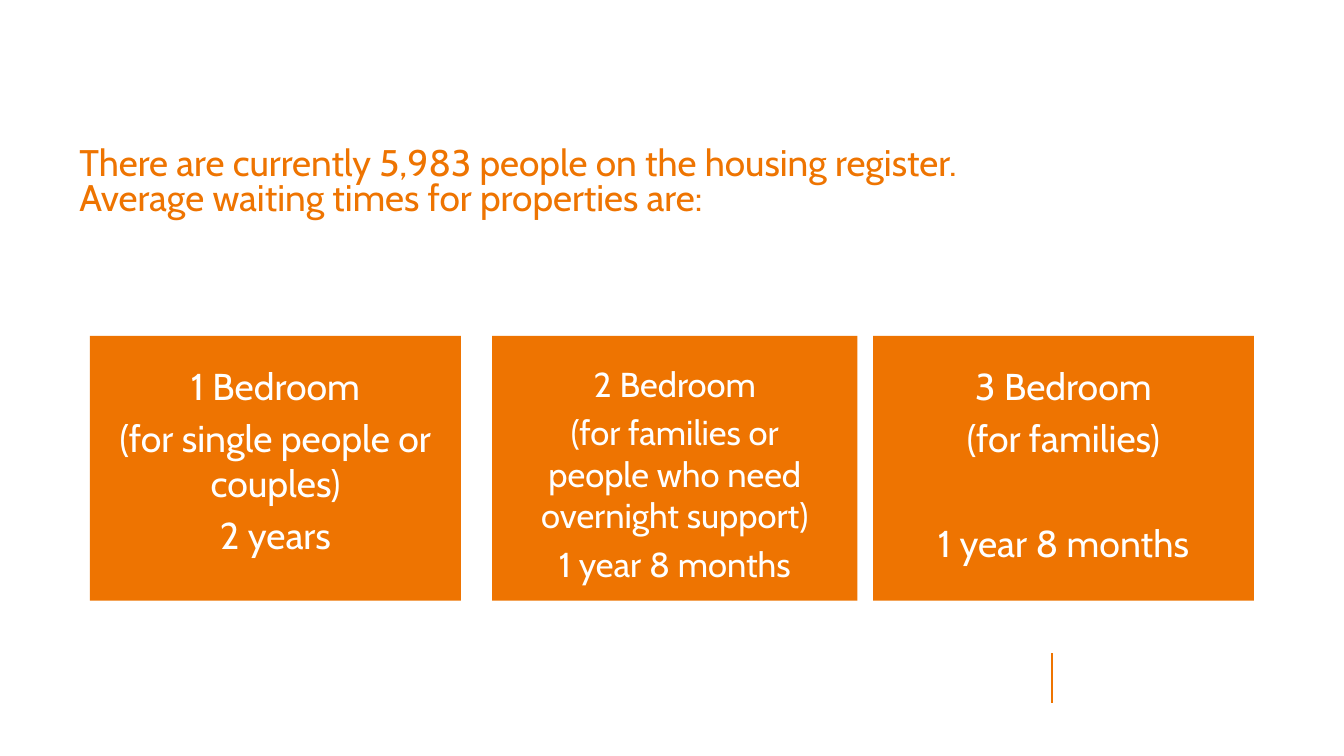
import pptx
import pptx.dml.color
import pptx.enum.shapes
import pptx.enum.text
import pptx.oxml.xmlchemy
import pptx.oxml.ns
import pptx.util
from lxml import etree

Pt = pptx.util.Pt
Align = pptx.enum.text.PP_ALIGN
Anchor = pptx.enum.text.MSO_ANCHOR

TITLE = ("There are currently 5,983 people on the housing register.\v"
         "Average waiting times for properties are:")

# left, width, type size, extra space above the waiting time, lines
CARDS = [
    (48.2, 198.8, 20, 0,
     ["1 Bedroom", "(for single people or couples)", "2 years"]),
    (263.6, 195.8, 18.5, 0,
     ["2 Bedroom", "(for families or people who need overnight support)",
      "1 year 8 months"]),
    (467.8, 203.9, 20, 28,
     ["3 Bedroom", "(for families)", "1 year 8 months"]),
]
CARD_TOP, CARD_HEIGHT, CARD_INSET = 180, 141.8, 14.4

THEME = {
    "font": "Cabin",
    "accent": pptx.dml.color.RGBColor.from_string("EE7401"),
    "on_accent": pptx.dml.color.RGBColor.from_string("FFFFFF"),
    "title_size": 19.8,
}


def place(shape, left, top, width, height):
    shape.left, shape.top = Pt(left), Pt(top)
    shape.width, shape.height = Pt(width), Pt(height)


def prepare_frame(shape, inset, anchor):
    frame = shape.text_frame
    frame.word_wrap = True
    frame.auto_size = pptx.enum.text.MSO_AUTO_SIZE.NONE
    frame.vertical_anchor = anchor
    frame.margin_left = frame.margin_right = Pt(inset)
    frame.margin_top = frame.margin_bottom = Pt(inset)
    return frame


def format_para(para, size, color, alignment):
    para.alignment = alignment
    para.font.name = THEME["font"]
    para.font.size = Pt(size)
    para.font.bold = False
    para.font.color.rgb = color


def remove_bullet(para):
    properties = para._p.get_or_add_pPr()
    properties.set("marL", "0")
    properties.set("indent", "0")
    etree.SubElement(properties, pptx.oxml.ns.qn("a:buNone"))


def add_title(page):
    title = page.shapes.title
    place(title, 42.5, 60.5, 623.5, 56.9)
    frame = prepare_frame(title, 0, Anchor.BOTTOM)
    frame.text = TITLE
    para = frame.paragraphs[0]
    para.line_spacing = 0.8
    format_para(para, THEME["title_size"], THEME["accent"], Align.LEFT)


def fill_card(box, left, width, size, extra_space, lines):
    place(box, left, CARD_TOP, width, CARD_HEIGHT)
    box.fill.solid()
    box.fill.fore_color.rgb = THEME["accent"]
    frame = prepare_frame(box, CARD_INSET, Anchor.TOP)
    frame.text = "\n".join(lines)
    for number, para in enumerate(frame.paragraphs):
        remove_bullet(para)
        para.space_before = Pt(0.2 * size if number else 0)
        format_para(para, size, THEME["on_accent"], Align.CENTER)
    if extra_space:
        para.space_before = Pt(0.2 * size + extra_space)


def add_footer_rule(page):
    rule = page.shapes.add_connector(
        pptx.enum.shapes.MSO_CONNECTOR.STRAIGHT,
        Pt(563.8), Pt(350), Pt(563.8), Pt(376.6))
    rule.line.color.rgb = THEME["accent"]
    rule.line.width = Pt(1)
    etree.SubElement(rule._element.spPr, pptx.oxml.ns.qn("a:effectLst"))


def main():
    deck = pptx.Presentation()
    deck.slide_width, deck.slide_height = Pt(720), Pt(405)
    page = deck.slides.add_slide(deck.slide_layouts.get_by_name("Comparison"))
    add_footer_rule(page)
    add_title(page)
    boxes = [box for box in page.placeholders
             if box.placeholder_format.idx > 0]
    for box, card in zip(boxes, CARDS):
        fill_card(box, *card)
    for spare in boxes[len(CARDS):]:
        spare._element.getparent().remove(spare._element)
    deck.save("out.pptx")


if __name__ == "__main__":
    main()
